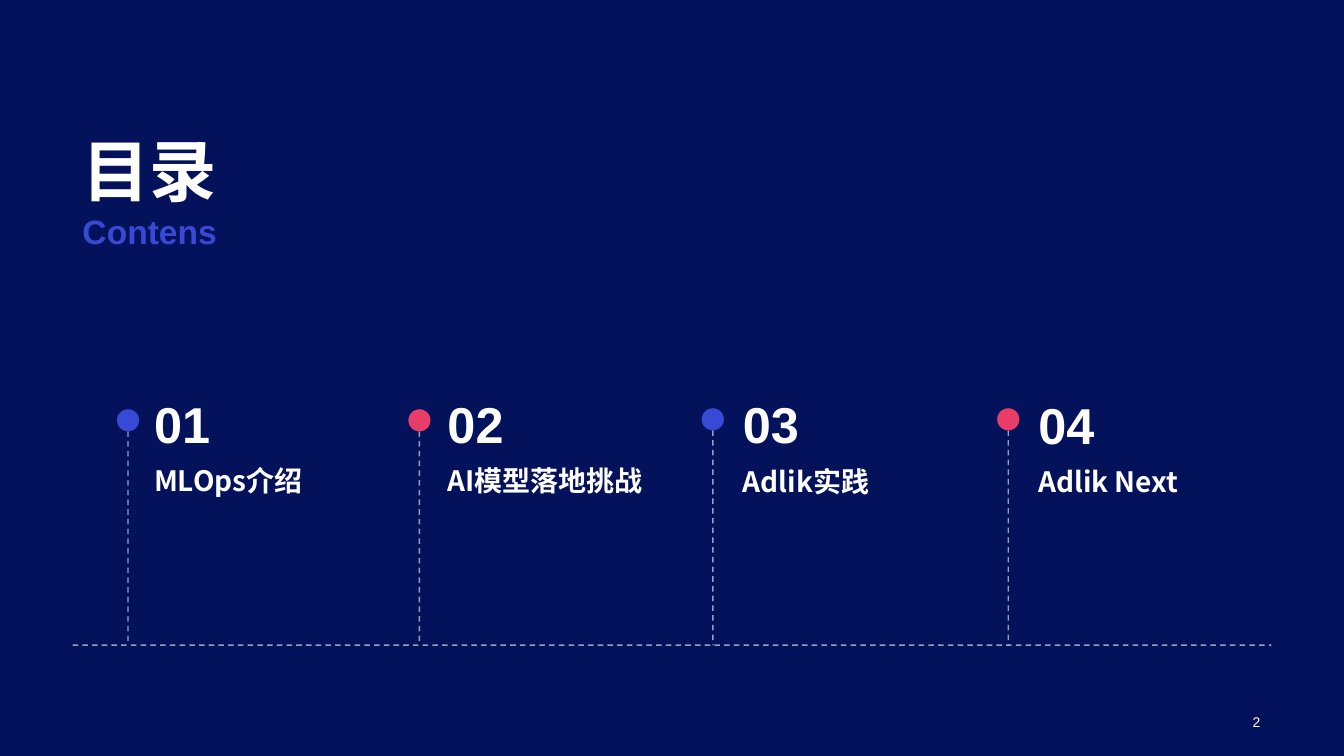
from pptx import Presentation
from pptx.dml.color import RGBColor
from pptx.enum.dml import MSO_LINE
from pptx.enum.shapes import MSO_CONNECTOR, MSO_SHAPE
from pptx.enum.text import MSO_ANCHOR as Anchor, MSO_AUTO_SIZE as AutoSize, PP_ALIGN as Align
from pptx.oxml.ns import qn
from pptx.util import Inches, Pt
from lxml.etree import SubElement

# Content
TITLE, SUBTITLE, PAGE = "目录", "Contens", "2"
# number, topic, dot colour, stem x, dot top, text left, number top, topic top, topic height
CHAPTERS = [
    ("01", "MLOps介绍", "blue", 1.27, 4.06, 1.43, 3.84, 4.67, 0.31),
    ("02", "AI模型落地挑战", "red", 4.16, 4.06, 4.34, 3.84, 4.67, 0.31),
    ("03", "Adlik实践", "blue", 7.07, 4.05, 7.27, 3.84, 4.68, 0.31),
    ("04", "Adlik Next", "red", 10.0, 4.05, 10.2, 3.85, 4.68, 0.52),
]

THEME = {
    "background": "04115B", "white": "FFFFFF", "blue": "374AD5", "red": "E83D66",
    "subtitle": "3749D5", "latin": "Arial", "cjk": "Noto Sans CJK SC",
    "title_pt": 48, "number_pt": 36, "subtitle_pt": 24, "topic_pt": 20, "page_pt": 10,
    "line_alpha": 60,
}
BASELINE_Y, DOT = 6.4, 0.22


def color(key):
    return RGBColor.from_string(THEME[key])


def add_text(text, box, size, font="latin", fill="white", bold=True,
             anchor=Anchor.BOTTOM, align=Align.LEFT, spacing=None, grow=True):
    frame = slide.shapes.add_textbox(*map(Inches, box)).text_frame
    frame.word_wrap = True
    frame.auto_size = AutoSize.SHAPE_TO_FIT_TEXT if grow else AutoSize.NONE
    frame.vertical_anchor = anchor
    paragraph = frame.paragraphs[0]
    paragraph.alignment = align
    if spacing:
        paragraph.line_spacing = Pt(spacing)
    run = paragraph.add_run()
    run.text = text
    run.font.size, run.font.bold = Pt(THEME[size]), bold
    run.font.color.rgb = color(fill)
    run.font.name = THEME[font]
    SubElement(run.font._element, qn("a:ea"), typeface=THEME["cjk"])


def add_dashed(x1, y1, x2, y2):
    dashed = slide.shapes.add_connector(MSO_CONNECTOR.STRAIGHT, *map(Inches, (x1, y1, x2, y2)))
    dashed.line.width = Pt(1)
    dashed.line.color.rgb = color("white")
    dashed.line.dash_style = MSO_LINE.DASH
    properties = dashed._element.spPr
    tint = next(properties.iter(qn("a:srgbClr")))
    SubElement(tint, qn("a:alpha"), val=str(THEME["line_alpha"] * 1000))
    SubElement(properties, qn("a:effectLst"))


prs = Presentation()
prs.slide_width, prs.slide_height = Inches(13.33), Inches(7.5)
slide = prs.slides.add_slide(prs.slide_layouts[6])
slide.background.fill.solid()
slide.background.fill.fore_color.rgb = color("background")

# Page number
add_text(PAGE, (9.69, 7.04, 2.91, 0.24), "page_pt", bold=False,
         anchor=Anchor.MIDDLE, align=Align.RIGHT, grow=False)

# Timeline and chapters
add_dashed(0.72, BASELINE_Y, 12.61, BASELINE_Y)
for number, topic, dot_fill, stem_x, dot_y, text_x, number_y, topic_y, topic_h in CHAPTERS:
    add_dashed(stem_x, dot_y + DOT, stem_x, BASELINE_Y)
    dot = slide.shapes.add_shape(MSO_SHAPE.OVAL, Inches(stem_x - DOT / 2), Inches(dot_y),
                                 Inches(DOT), Inches(DOT))
    dot.shadow.inherit = False
    dot.fill.solid()
    dot.fill.fore_color.rgb = color(dot_fill)
    dot.line.fill.background()
    add_text(topic, (text_x, topic_y, 2.33, topic_h), "topic_pt", font="cjk",
             anchor=Anchor.TOP, spacing=15)
    add_text(number, (text_x, number_y, 2.33, 0.71), "number_pt")

# Heading
add_text(SUBTITLE, (0.72, 2.04, 6.63, 0.5), "subtitle_pt", fill="subtitle")
add_text(TITLE, (0.72, 1.22, 6.63, 0.91), "title_pt")

prs.save("out.pptx")
